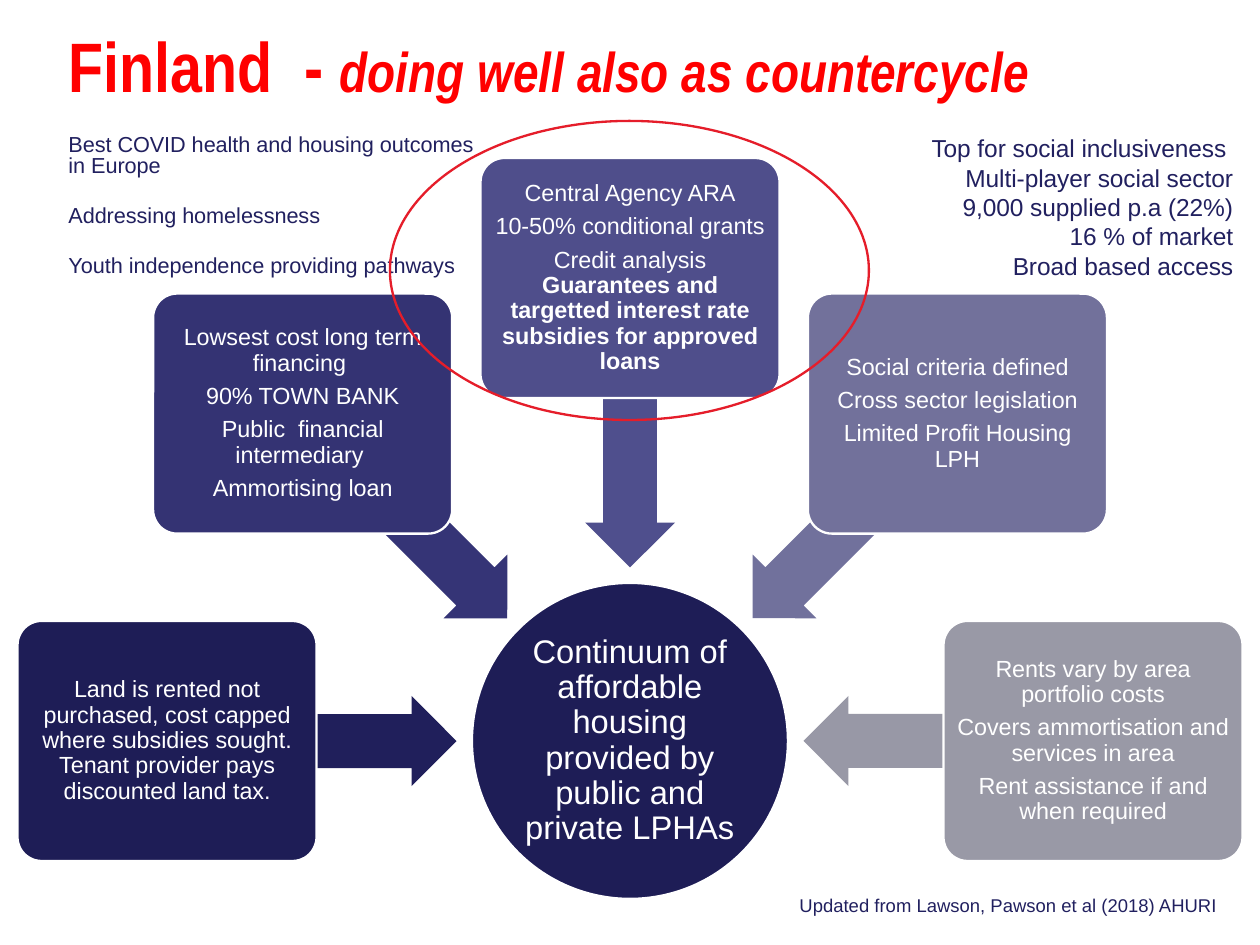
from math import cos, radians, sin

from pptx import Presentation
from pptx.dml.color import RGBColor
from pptx.enum.shapes import MSO_SHAPE
from pptx.enum.text import MSO_ANCHOR, MSO_AUTO_SIZE, PP_ALIGN
from pptx.util import Emu, Pt

LEFT, MID, RIGHT = PP_ALIGN.LEFT, PP_ALIGN.CENTER, PP_ALIGN.RIGHT
TOP, CENTER = MSO_ANCHOR.TOP, MSO_ANCHOR.MIDDLE
NO_FIT = MSO_AUTO_SIZE.NONE
OVAL, CARD, ARROW = MSO_SHAPE.OVAL, MSO_SHAPE.ROUNDED_RECTANGLE, MSO_SHAPE.LEFT_ARROW

COLORS = {
    "white": "FFFFFF", "red": "FF0000", "ring": "E51D2A", "ink": "21205F",
    "hub": "1E1D56", "land": "1E1D56", "loan": "343373", "agency": "4F4E8B",
    "rules": "72719B", "rent": "9999A6",
}
ARROWS = {
    "land": "201F5B", "loan": "353476", "agency": "4F4F8D",
    "rules": "71719C", "rent": "9898A6",
}
SPOKES = [
    ("land", ["Land is rented not purchased, cost capped where subsidies sought. "
              "Tenant provider pays discounted land tax."]),
    ("loan", ["Lowsest cost long term financing ", "90% TOWN BANK",
              "Public  financial intermediary ", "Ammortising loan"]),
    ("agency", ["Central Agency ARA", "10-50% conditional grants ",
                "Credit analysis "]),
    ("rules", ["Social criteria defined", "Cross sector legislation",
               "Limited Profit Housing LPH"]),
    ("rent", ["Rents vary by area portfolio costs",
              "Covers ammortisation and services in area",
              "Rent assistance if and when required"]),
]
STRONG = "Guarantees and targetted interest rate subsidies for approved loans"


def px(n):
    return Emu(round(n * 914400 / 168))


def rgb(code):
    return RGBColor.from_string(code)


def write(frame, lines, size, color, align, ratio=1.0, before=0, after=0):
    frame.word_wrap = True
    for i, line in enumerate(lines):
        para = frame.paragraphs[0] if i == 0 else frame.add_paragraph()
        para.text = line
        para.alignment = align
        para.line_spacing = ratio
        para.space_before = Pt(before if i else 0)
        para.space_after = Pt(after)
        para.font.name = "Arial"
        para.font.size = Pt(size)
        para.font.color.rgb = rgb(color)


def pad(frame, gap):
    frame.margin_left = frame.margin_right = px(gap)
    frame.margin_top = frame.margin_bottom = px(gap)
    frame.vertical_anchor = CENTER


def shape(slide, kind, box, fill=None, line=None):
    item = slide.shapes.add_shape(kind, *map(px, box))
    item.shadow.inherit = False
    if fill:
        item.fill.solid()
        item.fill.fore_color.rgb = rgb(fill)
    else:
        item.fill.background()
    if line:
        item.line.color.rgb = rgb(line)
        item.line.width = Pt(1)
    else:
        item.line.fill.background()
    return item


def around(x, y, w, h):
    return x - w / 2, y - h / 2, w, h


def title(slide, box):
    head = slide.shapes.title
    head.left, head.top, head.width, head.height = map(px, box)
    frame = head.text_frame
    frame.auto_size = NO_FIT
    frame.vertical_anchor = TOP
    para = frame.paragraphs[0]
    para.alignment = LEFT
    para.line_spacing = 0.9
    para.font.name = "Arial Narrow"
    para.font.bold = True
    para.font.color.rgb = rgb(COLORS["red"])
    for text, size, slant in (("Finland  - ", 30, False),
                              ("doing well also as countercycle", 24, True)):
        run = para.add_run()
        run.text = text
        run.font.size = Pt(size)
        run.font.italic = slant


def note(slide, box, lines, size, align, **gaps):
    frame = slide.shapes.add_textbox(*map(px, box)).text_frame
    write(frame, lines, size, COLORS["ink"], align, **gaps)
    return frame


def wheel(slide, x, y):
    white = COLORS["white"]
    hub = shape(slide, OVAL, around(x, y, 316, 316), COLORS["hub"], white)
    pad(hub.text_frame, 2)
    write(hub.text_frame, ["Continuum of affordable housing provided by "
                           "public and private LPHAs"], 14, white, MID, 0.9)
    for i, (name, lines) in enumerate(SPOKES):
        angle = 180 + 45 * i
        dx, dy = cos(radians(angle)), sin(radians(angle))
        arrow = shape(slide, ARROW, around(x + 318 * dx, y + 318 * dy, 289, 90),
                      ARROWS[name])
        arrow.adjustments[0], arrow.adjustments[1] = 0.6, 0.5
        arrow.rotation = angle % 360
        card = shape(slide, CARD, around(x + 463 * dx, y + 463 * dy, 299, 240),
                     COLORS[name], white)
        card.adjustments[0] = 0.1
        frame = card.text_frame
        pad(frame, 5)
        write(frame, lines, 10, white, MID, 0.9, after=3.5)
        if name == "agency":
            run = frame.paragraphs[-1].add_run()
            run.text = STRONG
            run.font.bold = True


def main():
    deck = Presentation()
    deck.slide_width, deck.slide_height = px(1260), px(945)
    slide = deck.slides.add_slide(deck.slide_layouts[5])
    title(slide, (52, 24, 1141, 183))
    left = note(slide, (52, 128, 440, 183),
                ["Best COVID health and housing outcomes in Europe",
                 "Addressing homelessness", "Youth independence providing pathways"],
                9.3, LEFT, ratio=0.8, before=7.5, after=5)
    left.margin_right = 0
    wheel(slide, 630, 741)
    note(slide, (754, 886, 479, 39),
         ["Updated from Lawson, Pawson et al (2018) AHURI"], 7.9, RIGHT)
    note(slide, (848, 125, 402, 165),
         ["Top for social inclusiveness ", "Multi-player social sector",
          "9,000 supplied p.a (22%)", "16 % of market", "Broad based access"],
         10.5, RIGHT)
    shape(slide, OVAL, (390, 121, 479, 299), line=COLORS["ring"])
    deck.save("out.pptx")


if __name__ == "__main__":
    main()
